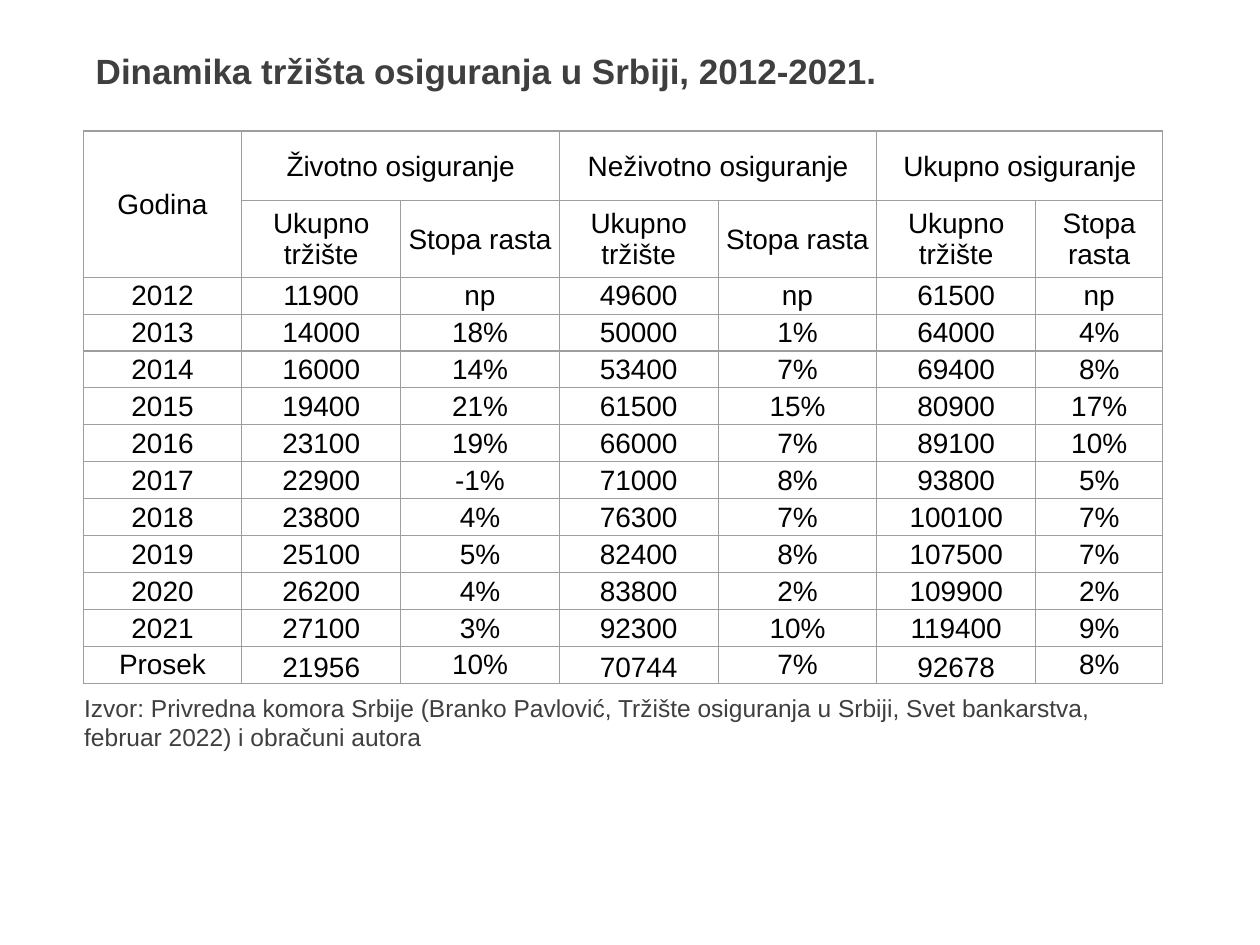
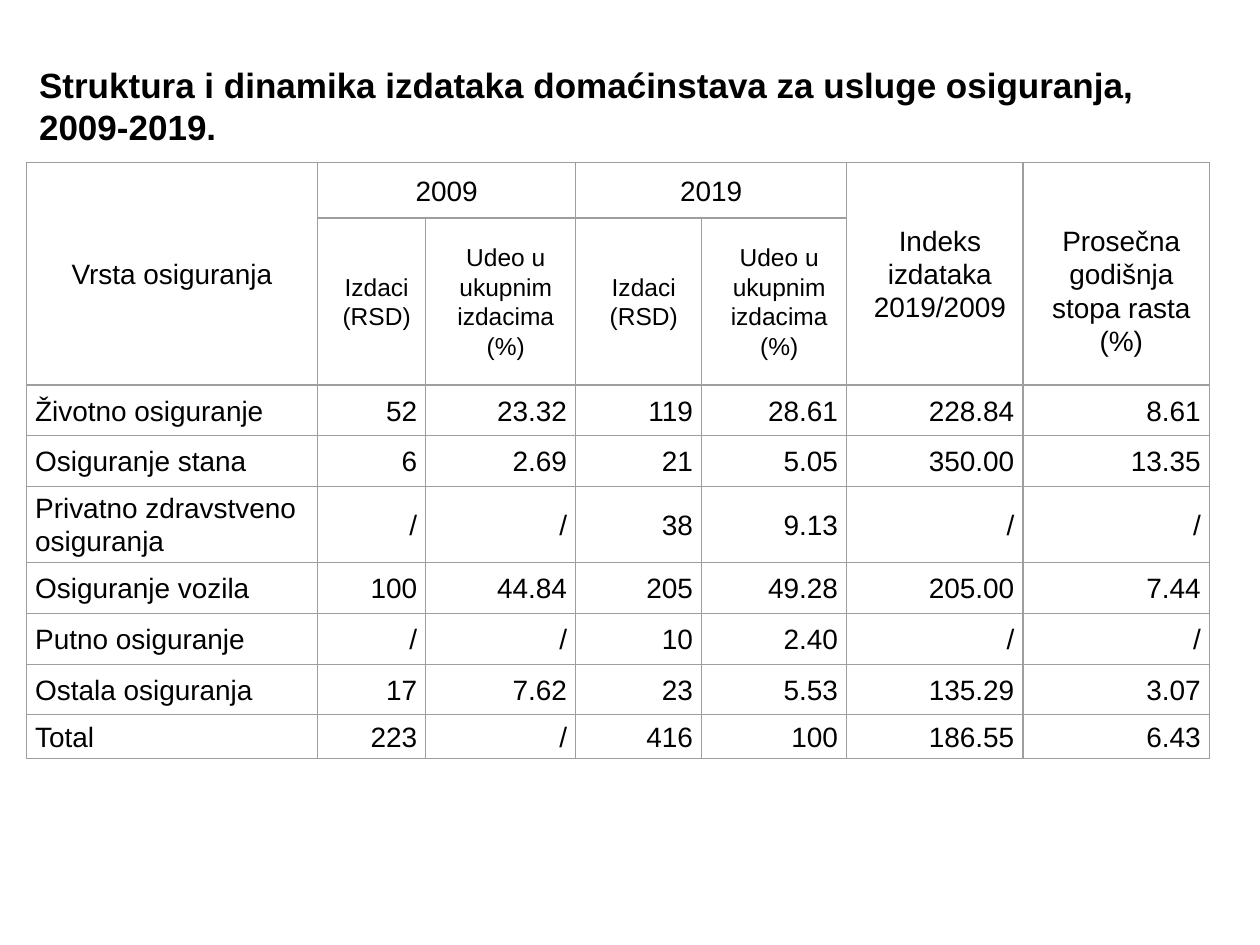
from collections import namedtuple

from lxml.etree import SubElement
from pptx import Presentation
from pptx.dml.color import RGBColor
from pptx.enum.text import MSO_ANCHOR as Anchor, MSO_AUTO_SIZE as AutoSize, PP_ALIGN as Align
from pptx.oxml.ns import qn
from pptx.util import Emu, Inches, Pt

COLORS = {"gray": "3F3F3F", "black": "000000", "border": "9E9E9E"}
FONT = "Arial"
BORDER_WIDTH = Pt(0.75)
SLIDE_WIDTH, SLIDE_HEIGHT = Inches(10), Inches(7.5)
GRID = SLIDE_WIDTH // 100  # the slide is 100 columns by 75 rows
TITLE_ONLY_LAYOUT = 5

Box = namedtuple("Box", "left top width height")
CellStyle = namedtuple("CellStyle", "margins line_spacing")

COMPACT = CellStyle(margins=(0.1, 0.1, 0.1, 0), line_spacing=None)
ROOMY = CellStyle(margins=(0.7, 0, 0.7, 0), line_spacing=1.07)

MARKET_HEADER = [
    ["Godina", "Životno osiguranje", "", "Neživotno osiguranje", "", "Ukupno osiguranje", ""],
    [""] + ["Ukupno tržište", "Stopa rasta"] * 3,
]
MARKET_ROWS = [
    ["2012", "11900", "np", "49600", "np", "61500", "np"],
    ["2013", "14000", "18%", "50000", "1%", "64000", "4%"],
    ["2014", "16000", "14%", "53400", "7%", "69400", "8%"],
    ["2015", "19400", "21%", "61500", "15%", "80900", "17%"],
    ["2016", "23100", "19%", "66000", "7%", "89100", "10%"],
    ["2017", "22900", "-1%", "71000", "8%", "93800", "5%"],
    ["2018", "23800", "4%", "76300", "7%", "100100", "7%"],
    ["2019", "25100", "5%", "82400", "8%", "107500", "7%"],
    ["2020", "26200", "4%", "83800", "2%", "109900", "2%"],
    ["2021", "27100", "3%", "92300", "10%", "119400", "9%"],
    ["Prosek", "21956", "10%", "70744", "7%", "92678", "8%"],
]

SPENDING_HEADER = [
    ["Vrsta osiguranja", "2009", "", "2019", "", "Indeks izdataka\n2019/2009",
     "Prosečna godišnja stopa rasta\n(%)"],
    [""] + ["Izdaci (RSD)", "Udeo u ukupnim izdacima (%)"] * 2 + ["", ""],
]
SPENDING_ROWS = [
    ["Životno osiguranje", "52", "23.32", "119", "28.61", "228.84", "8.61"],
    ["Osiguranje stana", "6", "2.69", "21", "5.05", "350.00", "13.35"],
    ["Privatno zdravstveno osiguranja", "/", "/", "38", "9.13", "/", "/"],
    ["Osiguranje vozila", "100", "44.84", "205", "49.28", "205.00", "7.44"],
    ["Putno osiguranje", "/", "/", "10", "2.40", "/", "/"],
    ["Ostala osiguranja", "17", "7.62", "23", "5.53", "135.29", "3.07"],
    ["Total", "223", "/", "416", "100", "186.55", "6.43"],
]


def grid(units):
    return Emu(round(units * GRID))


def write(frame, text, size, color="black", bold=False, align=Align.LEFT, line_spacing=None):
    """Fill a text frame, one paragraph for each line of the text."""
    frame.word_wrap = True
    for index, line in enumerate(text.split("\n")):
        paragraph = frame.add_paragraph() if index else frame.paragraphs[0]
        paragraph.alignment = align
        if line_spacing:
            paragraph.line_spacing = line_spacing
        run = paragraph.add_run()
        run.text = line
        run.font.name = FONT
        run.font.size = Pt(size)
        run.font.bold = bold
        run.font.color.rgb = RGBColor.from_string(COLORS[color])


def add_title(slide, box, text, color):
    title = slide.shapes.title
    title.left, title.top, title.width, title.height = map(grid, box)
    frame = title.text_frame
    frame.auto_size = AutoSize.NONE
    frame.vertical_anchor = Anchor.TOP
    write(frame, text, 20, color, bold=True)


def add_source_note(slide, box, text):
    note = slide.shapes.add_textbox(*map(grid, box))
    write(note.text_frame, text, 14, "gray")


def add_borders(cell):
    properties = cell._tc.get_or_add_tcPr()
    for index, side in enumerate(("lnL", "lnR", "lnT", "lnB")):
        line = SubElement(properties, qn(f"a:{side}"), w=str(BORDER_WIDTH))
        fill = SubElement(line, qn("a:solidFill"))
        SubElement(fill, qn("a:srgbClr"), val=COLORS["border"])
        properties.insert(index, line)


def indent_paragraphs(cell, units):
    for paragraph in cell.text_frame.paragraphs:
        paragraph._p.get_or_add_pPr().set("marL", str(grid(units)))


def add_grid_table(slide, box, column_widths, row_heights, rows, spans, style, cell_format):
    """Add a bordered table; cell_format gives the size and alignment of a cell."""
    frame = slide.shapes.add_table(len(rows), len(column_widths), *map(grid, box))
    table = frame.table
    table.first_row = table.horz_banding = False
    for column, width in zip(table.columns, column_widths):
        column.width = grid(width)
    for row, height in zip(table.rows, row_heights):
        row.height = grid(height)
    for row, texts in enumerate(rows):
        for column, text in enumerate(texts):
            cell = table.cell(row, column)
            cell.fill.background()
            add_borders(cell)
            cell.vertical_anchor = Anchor.MIDDLE
            (cell.margin_left, cell.margin_top,
             cell.margin_right, cell.margin_bottom) = map(grid, style.margins)
            if text:
                size, align = cell_format(row, column)
                write(cell.text_frame, text, size, align=align, line_spacing=style.line_spacing)
    for first, last in spans:
        table.cell(*first).merge(table.cell(*last))
    return table


def market_slide(slide):
    add_title(slide, Box(6.6, 3.4, 84.8, 5.6),
              "Dinamika tržišta osiguranja u Srbiji, 2012-2021.", "gray")
    spans = [((0, 0), (1, 0))] + [((0, column), (0, column + 1)) for column in (1, 3, 5)]
    table = add_grid_table(
        slide, Box(6.6, 10.4, 85.8, 43.9),
        [12.6] * 6 + [10.1], [5.5, 6.1] + [2.93] * len(MARKET_ROWS),
        MARKET_HEADER + MARKET_ROWS, spans, COMPACT,
        lambda row, column: (16, Align.CENTER))
    average_row = len(table.rows) - 1
    for column in (1, 3, 5):
        table.cell(average_row, column).vertical_anchor = Anchor.BOTTOM
    add_source_note(
        slide, Box(5.7, 54.5, 86.7, 5.6),
        "Izvor: Privredna komora Srbije (Branko Pavlović, Tržište osiguranja u Srbiji, "
        "Svet bankarstva, februar 2022) i obračuni autora")


def spending_format(row, column):
    if row < len(SPENDING_HEADER):
        return (14 if row else 16), Align.CENTER
    return 16, (Align.RIGHT if column else Align.LEFT)


def spending_slide(slide):
    spans = [((0, column), (1, column)) for column in (0, 5, 6)]
    spans += [((0, column), (0, column + 1)) for column in (1, 3)]
    table = add_grid_table(
        slide, Box(2.1, 12.9, 93.9, 45.4),
        [23.1, 8.6, 11.9, 10, 11.5, 14, 14.8],
        [4.4, 13, 4.03, 4.03, 6.05, 4.03, 4.03, 4.03, 3.45],
        SPENDING_HEADER + SPENDING_ROWS, spans, ROOMY, spending_format)
    for row, column in [(0, 5), (0, 6)] + [(1, column) for column in range(1, 5)]:
        indent_paragraphs(table.cell(row, column), 0.8)
    table.cell(0, 6).margin_top = grid(2.7)
    add_title(slide, Box(2.1, 4.5, 90.7, 7.7),
              "Struktura i dinamika izdataka domaćinstava za usluge osiguranja, 2009-2019.",
              "black")


def main():
    presentation = Presentation()
    presentation.slide_width, presentation.slide_height = SLIDE_WIDTH, SLIDE_HEIGHT
    layout = presentation.slide_layouts[TITLE_ONLY_LAYOUT]
    for build in (market_slide, spending_slide):
        build(presentation.slides.add_slide(layout))
    presentation.save("out.pptx")


if __name__ == "__main__":
    main()
